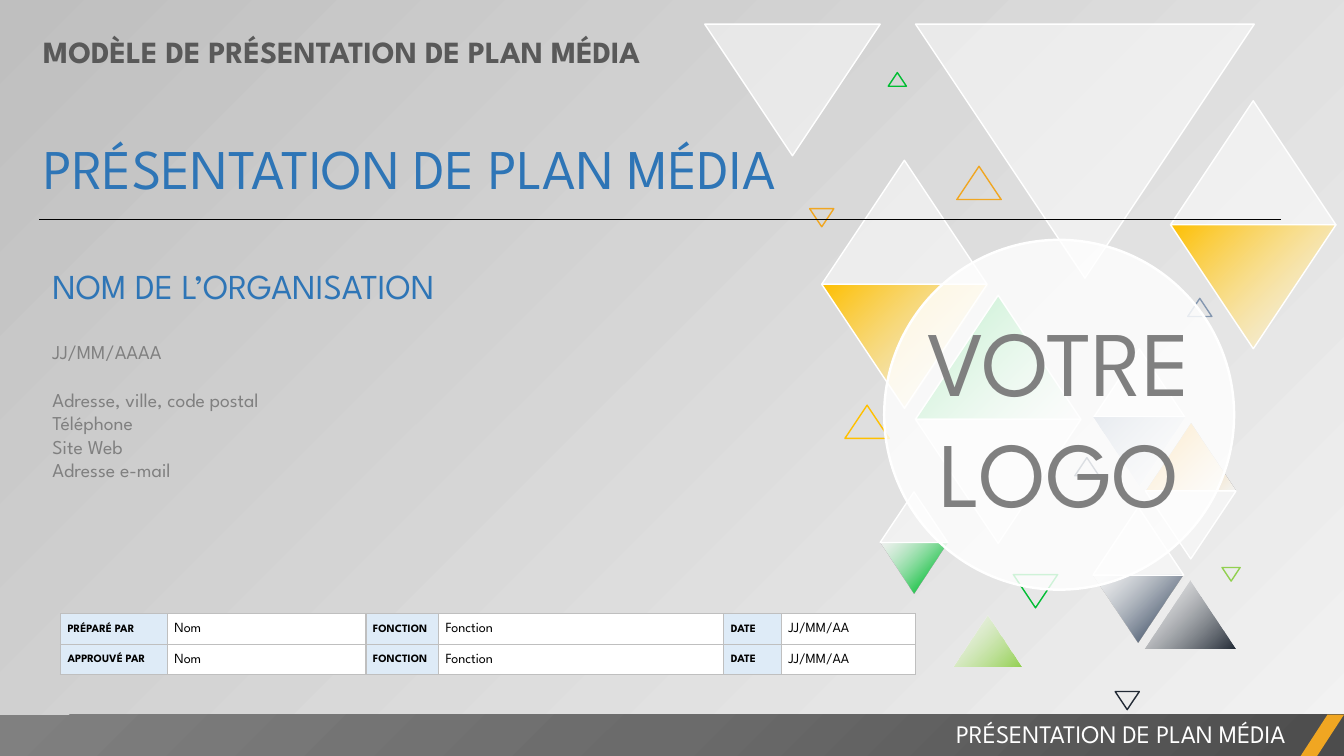
from dataclasses import dataclass

from lxml.etree import SubElement
from pptx import Presentation
from pptx.dml.color import RGBColor
from pptx.enum.shapes import MSO_CONNECTOR, MSO_SHAPE as Preset
from pptx.enum.text import MSO_ANCHOR as Anchor, MSO_AUTO_SIZE as AutoSize, PP_ALIGN as Align
from pptx.oxml.ns import qn
from pptx.util import Inches, Pt

FONT = "League Spartan"
WHITE = RGBColor(0xFF, 0xFF, 0xFF)
BLACK = RGBColor(0x00, 0x00, 0x00)
CHARCOAL = RGBColor(0x59, 0x59, 0x59)
GRAY = RGBColor(0x80, 0x80, 0x80)
SILVER = RGBColor(0xBF, 0xBF, 0xBF)
PALE_GRAY = RGBColor(0xF2, 0xF2, 0xF2)
BAR_DARK = RGBColor(0x4C, 0x4C, 0x4C)
BAR_MIDDLE = RGBColor(0x6B, 0x6B, 0x6B)
BLUE = RGBColor(0x2E, 0x75, 0xB6)
PALE_BLUE = RGBColor(0xDE, 0xEB, 0xF7)
GOLD = RGBColor(0xFF, 0xC0, 0x00)
ORANGE = RGBColor(0xF0, 0xA6, 0x22)
GREEN = RGBColor(0x00, 0xBD, 0x32)
LIME = RGBColor(0x92, 0xD0, 0x50)
NAVY = RGBColor(0x22, 0x2A, 0x35)
SLATE = RGBColor(0x44, 0x54, 0x6A)
STEEL = RGBColor(0x84, 0x97, 0xB0)


@dataclass(frozen=True)
class Stop:
    position: int
    color: RGBColor
    opacity: int = 100


Paint = tuple[Stop, ...]


@dataclass(frozen=True)
class Triangle:
    left: float
    top: float
    width: float
    down: bool = False
    paint: Paint = ()
    outline: RGBColor | None = None


def fade_out(color: RGBColor) -> Paint:
    return Stop(0, color), Stop(100, WHITE, 50)


def fade_in(color: RGBColor) -> Paint:
    return Stop(0, WHITE, 50), Stop(82, color)


GLASS: Paint = (Stop(0, WHITE, 50),)

TRIANGLES = [
    Triangle(8.15, 1.59, 1.64, False, GLASS, WHITE),
    Triangle(8.15, 2.82, 1.64, True, fade_out(GOLD), WHITE),
    Triangle(9.08, 2.93, 1.64, False, fade_in(GREEN), WHITE),
    Triangle(9.08, 4.16, 1.64, True, GLASS, WHITE),
    Triangle(9.08, 0.24, 3.36, True, GLASS, WHITE),
    Triangle(11.35, 5.76, 0.9, False, fade_out(NAVY)),
    Triangle(10.84, 5.7, 0.9, True, fade_in(SLATE)),
    Triangle(10.84, 5.03, 0.9, False, GLASS, WHITE),
    Triangle(10.85, 3.46, 0.9, False, GLASS, WHITE),
    Triangle(10.85, 4.14, 0.9, True, fade_out(STEEL)),
    Triangle(11.36, 4.2, 0.9, False, fade_in(ORANGE)),
    Triangle(11.36, 4.87, 0.9, True, GLASS, WHITE),
    Triangle(9.46, 6.11, 0.67, False, fade_out(LIME)),
    Triangle(8.73, 5.38, 0.67, True, fade_in(GREEN)),
    Triangle(8.73, 4.88, 0.67, False, GLASS, WHITE),
    Triangle(11.61, 1, 1.64, False, GLASS, WHITE),
    Triangle(11.61, 2.23, 1.64, True, fade_out(GOLD), WHITE),
    Triangle(10.05, 5.7, 0.44, True, outline=GREEN),
    Triangle(8.38, 4.02, 0.44, outline=GOLD),
    Triangle(10.66, 4.54, 0.24, outline=SLATE),
    Triangle(11.06, 6.86, 0.24, True, outline=NAVY),
    Triangle(8.03, 2.07, 0.24, True, outline=ORANGE),
    Triangle(11.78, 2.96, 0.24, outline=STEEL),
    Triangle(8.81, 0.72, 0.18, outline=GREEN),
    Triangle(12.12, 5.63, 0.18, True, outline=LIME),
    Triangle(9.49, 1.65, 0.44, outline=ORANGE),
    Triangle(6.99, 0.24, 1.74, True, GLASS, WHITE),
]

COLUMN_WIDTHS = [1.06, 1.97, 0.72, 2.83, 0.57, 1.33]
APPROVALS = [
    [label, "Nom", "FONCTION", "Fonction", "DATE", "JJ/MM/AA"]
    for label in ("PRÉPARÉ PAR", "APPROUVÉ PAR")
]


def inches(*lengths: float) -> list[int]:
    return [Inches(length) for length in lengths]


def set_opacity(color_element, opacity: int) -> None:
    if opacity < 100:
        SubElement(color_element, qn("a:alpha"), val=str(opacity * 1000))


def set_gradient(fill, element, paint: Paint) -> None:
    """Run the stops from the bottom right corner to the top left one."""
    fill.gradient()
    fill.gradient_angle = 135
    stop_list = next(element.iter(qn("a:gsLst")))
    for default_stop in list(stop_list):
        stop_list.remove(default_stop)
    for stop in paint:
        item = SubElement(stop_list, qn("a:gs"), pos=str(stop.position * 1000))
        set_opacity(SubElement(item, qn("a:srgbClr"), val=str(stop.color)), stop.opacity)


def add_figure(shapes, preset, box, paint: Paint, outline=None, weight: float = 1):
    shape = shapes.add_shape(preset, *inches(*box))
    shape.shadow.inherit = False
    if not paint:
        shape.fill.background()
    elif len(paint) == 1:
        shape.fill.solid()
        shape.fill.fore_color.rgb = paint[0].color
        set_opacity(shape.element.spPr.find(qn("a:solidFill"))[0], paint[0].opacity)
    else:
        set_gradient(shape.fill, shape.element.spPr, paint)
    if outline is None:
        shape.line.fill.background()
    else:
        shape.line.color.rgb = outline
        shape.line.width = Pt(weight)
    return shape


def style(para, size: float, color: RGBColor, bold: bool = False, align=Align.LEFT) -> None:
    para.alignment = align
    para.font.name, para.font.size, para.font.bold = FONT, Pt(size), bold
    para.font.color.rgb = color


def add_label(page, box, text: str, size: float, color: RGBColor, bold=False, align=Align.LEFT) -> None:
    frame = page.shapes.add_textbox(*inches(*box)).text_frame
    frame.word_wrap = True
    frame.text = text
    style(frame.paragraphs[0], size, color, bold, align)


def place(holder, box) -> None:
    holder.left, holder.top, holder.width, holder.height = inches(*box)
    holder.text_frame.auto_size = AutoSize.NONE
    holder.text_frame.vertical_anchor = Anchor.TOP


def add_triangles(page) -> None:
    group = page.shapes.add_group_shape()
    for item in TRIANGLES:
        box = item.left, item.top, item.width, item.width * 0.75
        shape = add_figure(group.shapes, Preset.ISOSCELES_TRIANGLE, box, item.paint, item.outline)
        shape.rotation = 180 if item.down else 0
    page.shapes[0].element.addprevious(group.element)  # behind the placeholders


def fill_contact(body) -> None:
    place(body, (0.42, 2.57, 9.08, 2.27))
    lines = ["NOM DE L’ORGANISATION", "JJ/MM/AAAA", "Adresse, ville, code postal",
             "Téléphone", "Site Web", "Adresse e-mail"]
    gaps = [0, 24.5, 17, 0, 0, 0]
    body.text_frame.text = "\n".join(lines)
    for row, (para, gap) in enumerate(zip(body.text_frame.paragraphs, gaps)):
        style(para, 14 if row else 25, GRAY if row else BLUE)
        para.space_before = Pt(gap)
        properties = para._p.get_or_add_pPr()
        properties.set("marL", "0")
        properties.set("indent", "0")
        properties.insert_element_before(SubElement(properties, qn("a:buNone")), "a:defRPr")


def add_footer(page) -> None:
    shades = Stop(0, BAR_DARK), Stop(50, BAR_MIDDLE), Stop(100, GRAY)
    bar = add_figure(page.shapes, Preset.RECTANGLE, (0, 7.09, 13.33, 0.41), shades)
    gradient = bar.element.spPr.find(qn("a:gradFill"))
    gradient.remove(gradient.find(qn("a:lin")))
    circle = SubElement(gradient, qn("a:path"), path="circle")
    SubElement(circle, qn("a:fillToRect"), l="100000", t="100000")
    slant = add_figure(page.shapes, Preset.PARALLELOGRAM, (12.9, 7.09, 0.43, 0.41), (Stop(0, ORANGE),))
    slant.adjustments[0] = 0.65
    add_label(page, (5.25, 7.08, 7.6, 0.4), "PRÉSENTATION DE PLAN MÉDIA", 18, WHITE, align=Align.RIGHT)


def add_rule(page) -> None:
    rule = page.shapes.add_connector(MSO_CONNECTOR.STRAIGHT, *inches(0.39, 2.18, 12.71, 2.18))
    rule.line.color.rgb = BLACK
    rule.line.width = Pt(0.5)
    SubElement(rule.element.spPr, qn("a:effectLst"))


def add_logo_spot(page) -> None:
    spot = add_figure(page.shapes, Preset.OVAL, (8.77, 2.38, 3.47, 3.47), (Stop(0, WHITE, 81),), WHITE, 1.75)
    frame = spot.text_frame
    frame.margin_left = frame.margin_top = frame.margin_right = frame.margin_bottom = 0
    frame.word_wrap = False
    frame.vertical_anchor = Anchor.MIDDLE
    frame.text = "VOTRE\nLOGO"
    for para in frame.paragraphs:
        style(para, 66, GRAY, align=Align.CENTER)


def format_cell(cell, text: str, is_label: bool) -> None:
    cell.text = text
    cell.margin_left = cell.margin_right = Inches(0.07)
    cell.margin_top = cell.margin_bottom = 0
    cell.vertical_anchor = Anchor.MIDDLE
    para = cell.text_frame.paragraphs[0]
    para.line_spacing = 1.07
    style(para, 8 if is_label else 10, BLACK, is_label)
    for side in ("lnL", "lnR", "lnT", "lnB"):
        border = SubElement(cell._tc.get_or_add_tcPr(), qn(f"a:{side}"), w=str(Pt(1)))
        SubElement(SubElement(border, qn("a:solidFill")), qn("a:srgbClr"), val=str(SILVER))
    cell.fill.solid()
    cell.fill.fore_color.rgb = PALE_BLUE if is_label else WHITE


def add_approvals(page) -> None:
    box = inches(0.6, 6.09, sum(COLUMN_WIDTHS), 0.6)
    table = page.shapes.add_table(len(APPROVALS), len(COLUMN_WIDTHS), *box).table
    table.first_row = table.horz_banding = False
    for column, width in zip(table.columns, COLUMN_WIDTHS):
        column.width = Inches(width)
    for row, texts in enumerate(APPROVALS):
        for column, text in enumerate(texts):
            format_cell(table.cell(row, column), text, column % 2 == 0)


def main() -> None:
    deck = Presentation()
    deck.slide_width, deck.slide_height = inches(13.33, 7.5)
    page = deck.slides.add_slide(deck.slide_layouts[1])
    set_gradient(page.background.fill, page.element, (Stop(0, PALE_GRAY, 40), Stop(100, SILVER)))
    add_triangles(page)
    title = page.shapes.title
    place(title, (0.33, 1.27, 12.55, 0.77))
    title.text_frame.text = "PRÉSENTATION DE PLAN MÉDIA"
    style(title.text_frame.paragraphs[0], 40, BLUE)
    fill_contact(page.placeholders[1])
    add_label(page, (0.33, 0.28, 9.05, 0.47), "MODÈLE DE PRÉSENTATION DE PLAN MÉDIA", 22, CHARCOAL, True)
    add_footer(page)
    add_rule(page)
    add_logo_spot(page)
    add_approvals(page)
    deck.save("out.pptx")


if __name__ == "__main__":
    main()
